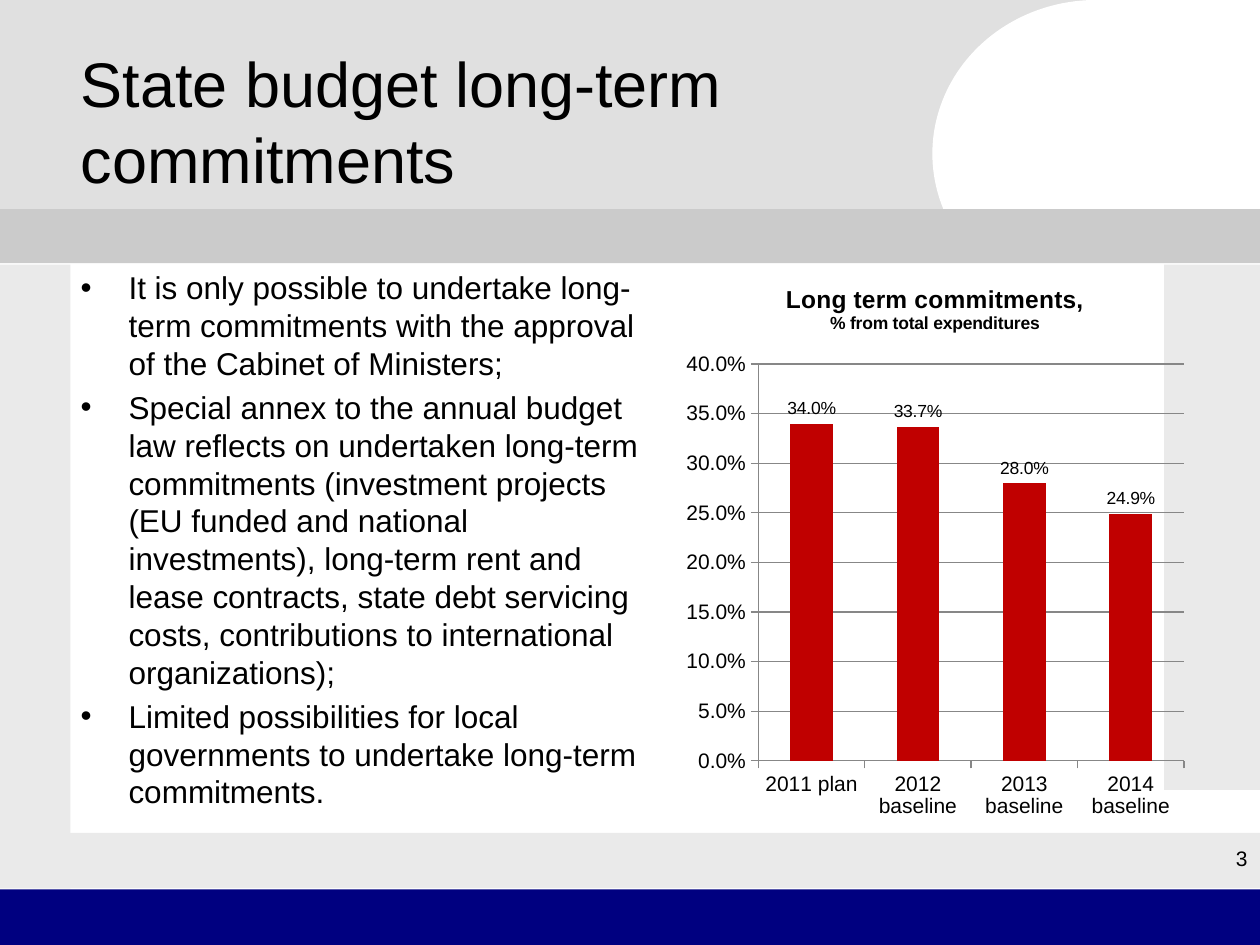
from dataclasses import dataclass

import lxml.etree
import pptx
import pptx.chart.data
import pptx.dml.color
import pptx.enum.chart
import pptx.enum.shapes
import pptx.enum.text
import pptx.oxml
import pptx.oxml.ns
import pptx.util

PX = 9144  # EMU in one px, 100 px to the inch
SLIDE_BOX = (0, 0, 1000, 750)


@dataclass(frozen=True)
class Theme:
    font: str = "Arial"
    text: str = "000000"
    white: str = "FFFFFF"
    header: str = "E0E0E0"
    band: str = "CBCBCB"
    margin: str = "EAEAEA"
    footer: str = "000080"
    bar: str = "C00000"
    grid: str = "878787"
    title_size: int = 36
    body_size: int = 18
    chart_title_size: int = 14
    small_size: int = 12
    label_size: int = 10


THEME = Theme()

POINTS = [
    "It is only possible to undertake long-term commitments with the approval "
    "of the Cabinet of Ministers;",
    "Special annex to the annual budget law reflects on undertaken long-term "
    "commitments (investment projects (EU funded and national investments), "
    "long-term rent and lease contracts, state debt servicing costs, "
    "contributions to international organizations);",
    "Limited possibilities for local governments to undertake long-term commitments.",
]
COMMITMENTS = {
    "2011 plan": 0.34,
    "2012 baseline": 0.337,
    "2013 baseline": 0.28,
    "2014 baseline": 0.249,
}


def rgb(color):
    return pptx.dml.color.RGBColor.from_string(color)


def emu(box):
    return [pptx.util.Emu(length * PX) for length in box]


def style_font(font, size, bold=False):
    font.name = THEME.font
    font.size = pptx.util.Pt(size)
    font.bold = bold
    font.color.rgb = rgb(THEME.text)


def place(shape, box):
    """Move a placeholder to its box and above the backdrop."""
    shape.left, shape.top, shape.width, shape.height = emu(box)
    shape.element.getparent().append(shape.element)
    shape.text_frame.auto_size = pptx.enum.text.MSO_AUTO_SIZE.NONE


def add_backdrop(slide, box):
    left, top, width, height = box
    shapes = pptx.enum.shapes.MSO_SHAPE
    parts = [
        (shapes.RECTANGLE, (0, 0, 909, 169), THEME.header),
        (shapes.OVAL, (740, 0, width - 740, 244), THEME.white),
        (shapes.RECTANGLE, (0, 210, 56, 495), THEME.margin),
        (shapes.RECTANGLE, (26, 661, width - 26, 44), THEME.margin),
        (shapes.RECTANGLE, (0, height - 44, width, 44), THEME.footer),
        (shapes.RECTANGLE, (924, 210, width - 924, 417), THEME.margin),
        (shapes.RECTANGLE, (862, 0, width - 862, 202), THEME.white),
        (shapes.RECTANGLE, (0, 166, width, 43), THEME.band),
    ]
    for kind, (x, y, part_width, part_height), color in parts:
        part_box = (left + x, top + y, part_width, part_height)
        shape = slide.shapes.add_shape(kind, *emu(part_box))
        shape.shadow.inherit = False
        shape.fill.solid()
        shape.fill.fore_color.rgb = rgb(color)
        shape.line.fill.background()


def add_title(slide, box, text):
    title = slide.shapes.title
    place(title, box)
    title.text_frame.text = text
    title.text_frame.vertical_anchor = pptx.enum.text.MSO_ANCHOR.MIDDLE
    paragraph = title.text_frame.paragraphs[0]
    paragraph.alignment = pptx.enum.text.PP_ALIGN.LEFT
    style_font(paragraph.runs[0].font, THEME.title_size)


def add_points(slide, box, points):
    body = slide.placeholders[1]
    place(body, box)
    body.text_frame.text = "\n".join(points)
    for index, paragraph in enumerate(body.text_frame.paragraphs):
        paragraph.space_before = pptx.util.Pt(3.6 if index else 0)
        properties = paragraph._p.get_or_add_pPr()
        properties.set("marL", str(38 * PX))
        properties.set("indent", str(-38 * PX))
        bullet = lxml.etree.SubElement(properties, pptx.oxml.ns.qn("a:buChar"))
        bullet.set("char", "•")
        style_font(paragraph.runs[0].font, THEME.body_size)


def add_page_number(slide, box, number):
    text_box = slide.shapes.add_textbox(*emu(box))
    text_box.text_frame.word_wrap = True
    text_box.text_frame.text = str(number)
    paragraph = text_box.text_frame.paragraphs[0]
    paragraph.alignment = pptx.enum.text.PP_ALIGN.RIGHT
    style_font(paragraph.runs[0].font, THEME.small_size)


def set_plot_layout(chart, **fractions):
    """Fix the inner plot area, in fractions of the chart."""
    plot_area = chart._chartSpace.chart.plotArea
    for old_layout in plot_area.findall(pptx.oxml.ns.qn("c:layout")):
        plot_area.remove(old_layout)
    settings = {"layoutTarget": "inner", "xMode": "edge", "yMode": "edge", **fractions}
    values = "".join(f'<c:{name} val="{value}"/>' for name, value in settings.items())
    plot_area.insert(0, pptx.oxml.parse_xml(
        f'<c:layout {pptx.oxml.ns.nsdecls("c")}>'
        f"<c:manualLayout>{values}</c:manualLayout></c:layout>"))


def add_commitments_chart(slide, box, values):
    data = pptx.chart.data.CategoryChartData(number_format="0.0%")
    data.categories = list(values)
    data.add_series("Series 1", list(values.values()))
    chart = slide.shapes.add_chart(
        pptx.enum.chart.XL_CHART_TYPE.COLUMN_CLUSTERED, *emu(box), data).chart
    chart.has_legend = False
    style_font(chart.font, THEME.body_size)

    # Title
    title_frame = chart.chart_title.text_frame
    title_frame.text = "Long term commitments,\n% from total expenditures"
    sizes = (THEME.chart_title_size, THEME.label_size)
    for paragraph, size in zip(title_frame.paragraphs, sizes):
        style_font(paragraph.runs[0].font, size, bold=True)
    chart.chart_title.include_in_layout = False

    # Axes
    for axis in (chart.category_axis, chart.value_axis):
        axis.major_tick_mark = pptx.enum.chart.XL_TICK_MARK.OUTSIDE
        axis.format.line.color.rgb = rgb(THEME.grid)
        style_font(axis.tick_labels.font, THEME.small_size)
    value_axis = chart.value_axis
    value_axis.minimum_scale, value_axis.maximum_scale = 0, 0.4
    value_axis.major_unit = 0.05
    value_axis.tick_labels.number_format = "0.0%"
    value_axis.tick_labels.number_format_is_linked = False
    value_axis.major_gridlines.format.line.color.rgb = rgb(THEME.grid)

    # Columns and their labels
    plot = chart.plots[0]
    plot.vary_by_categories = False
    plot.gap_width = 150
    series = plot.series[0]
    series.format.fill.solid()
    series.format.fill.fore_color.rgb = rgb(THEME.bar)
    labels = series.data_labels
    labels.show_value = True
    labels.number_format = "0.0%"
    labels.number_format_is_linked = False
    labels.position = pptx.enum.chart.XL_LABEL_POSITION.OUTSIDE_END
    style_font(labels.font, THEME.label_size)
    set_plot_layout(chart, x=0.16, y=0.18, w=0.82, h=0.7)


def main():
    presentation = pptx.Presentation()
    presentation.slide_width, presentation.slide_height = emu(SLIDE_BOX[2:])
    slide = presentation.slides.add_slide(presentation.slide_layouts[1])
    add_backdrop(slide, SLIDE_BOX)
    add_title(slide, (54, 33, 740, 125), "State budget long-term commitments")
    add_points(slide, (54, 208, 466, 450), POINTS)
    add_page_number(slide, (774, 666, 226, 50), 3)
    add_commitments_chart(slide, (536, 208, 412, 450), COMMITMENTS)
    presentation.save("out.pptx")


if __name__ == "__main__":
    main()
